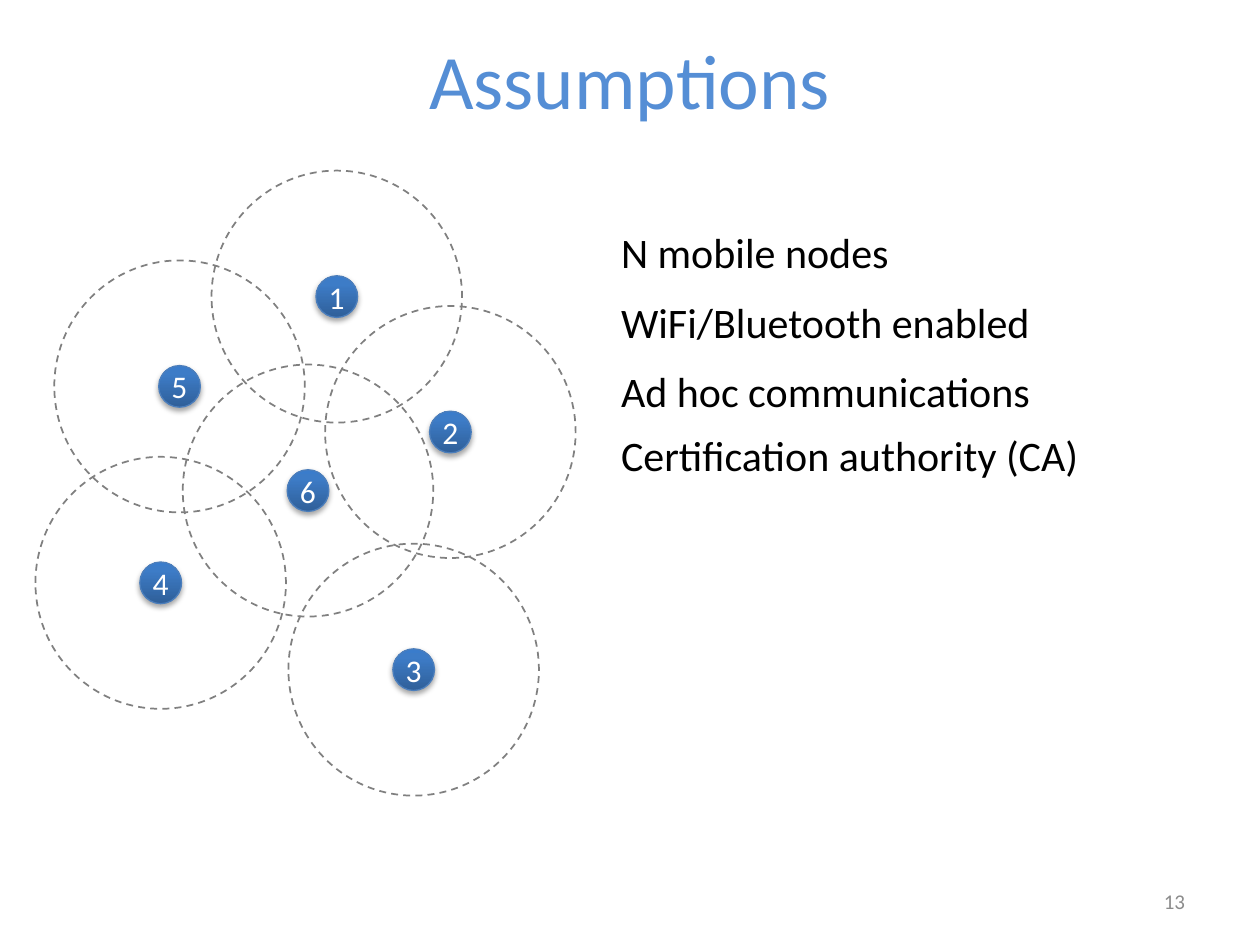
from dataclasses import dataclass

from lxml import etree
from pptx import Presentation
from pptx.dml.color import RGBColor
from pptx.enum.dml import MSO_LINE
from pptx.enum.shapes import MSO_SHAPE
from pptx.enum.text import MSO_ANCHOR, PP_ALIGN
from pptx.oxml.ns import qn
from pptx.util import Cm, Pt

OVAL = MSO_SHAPE.OVAL
DASH = MSO_LINE.DASH
TOP, MIDDLE = MSO_ANCHOR.TOP, MSO_ANCHOR.MIDDLE
LEFT, CENTER, RIGHT = PP_ALIGN.LEFT, PP_ALIGN.CENTER, PP_ALIGN.RIGHT

FONT = "Calibri"
BLACK, WHITE = "000000", "FFFFFF"
DOT = 0.84
RING_W, RING_H = 5.05, 5.08
STOPS = ((0, "2F5F99"), (80, "3D7CC7"), (100, "3A7CCB"))


@dataclass
class Node:
    """A mobile node, placed by its centre in cm."""
    label: str
    x: float
    y: float


@dataclass
class Box:
    """A text box, in cm, with the style its lines share."""
    lines: tuple
    x: float
    y: float
    w: float
    h: float
    size: float
    color: str = BLACK
    align: PP_ALIGN = LEFT
    anchor: MSO_ANCHOR = TOP
    before: float = 0
    after: float = 0


NODES = (
    Node("3", 8.34, 13.5),
    Node("2", 9.08, 8.71),
    Node("1", 6.79, 5.98),
    Node("5", 3.62, 7.79),
    Node("4", 3.24, 11.75),
    Node("6", 6.21, 9.89),
)
BOXES = (
    Box(("Assumptions",), 1.27, 0, 22.86, 3.18, 44, "558ED5", CENTER, MIDDLE),
    Box(("N mobile nodes", "WiFi/Bluetooth enabled", "Ad hoc communications"),
        12.27, 4.45, 11.43, 4.04, 24, before=4.8, after=6),
    Box(("Certification authority (CA)",), 12.27, 8.53, 13.13, 2.51, 24, before=6),
    Box(("13",), 18.21, 17.65, 5.93, 1.02, 12, "8C8C8C", RIGHT, MIDDLE),
)


def paint(code: str) -> RGBColor:
    return RGBColor.from_string(code)


def style(para, size: float, color: str, align: PP_ALIGN) -> None:
    para.alignment = align
    para.font.name = FONT
    para.font.size = Pt(size)
    para.font.color.rgb = paint(color)


def write(slide, box: Box) -> None:
    shape = slide.shapes.add_textbox(Cm(box.x), Cm(box.y), Cm(box.w), Cm(box.h))
    frame = shape.text_frame
    frame.word_wrap = True
    frame.vertical_anchor = box.anchor
    frame.text = "\n".join(box.lines)
    for para in frame.paragraphs:
        style(para, box.size, box.color, box.align)
        para.space_before = Pt(box.before)
        para.space_after = Pt(box.after)


def oval(slide, node: Node, w: float, h: float):
    shape = slide.shapes.add_shape(
        OVAL, Cm(node.x - w / 2), Cm(node.y - h / 2), Cm(w), Cm(h))
    shape.shadow.inherit = False
    return shape


def tint(parent, code: str):
    return etree.SubElement(parent, qn("a:srgbClr"), val=code)


def shade(shape) -> None:
    """Fill with the three-stop gradient, dark at the bottom."""
    shape.fill.gradient()
    shape.fill.gradient_angle = 90
    stops = next(shape.element.iter(qn("a:gsLst")))
    for stop in list(stops):
        stops.remove(stop)
    for pos, code in STOPS:
        tint(etree.SubElement(stops, qn("a:gs"), pos=str(pos * 1000)), code)


def cast(shape) -> None:
    """Add a soft shadow below the shape."""
    effects = next(shape.element.iter(qn("a:effectLst")))
    shadow = etree.SubElement(
        effects, qn("a:outerShdw"), blurRad=str(Pt(3.1)), dist=str(Pt(1.8)),
        dir="5400000", rotWithShape="0")
    etree.SubElement(tint(shadow, BLACK), qn("a:alpha"), val="35000")


def draw(slide, node: Node) -> None:
    dot = oval(slide, node, DOT, DOT)
    shade(dot)
    dot.line.color.rgb = paint("4B7EBC")
    dot.line.width = Pt(0.75)
    cast(dot)
    frame = dot.text_frame
    frame.word_wrap = False
    frame.vertical_anchor = MIDDLE
    frame.text = node.label
    style(frame.paragraphs[0], 18, WHITE, CENTER)

    ring = oval(slide, node, RING_W, RING_H)
    ring.fill.background()
    ring.line.color.rgb = paint("808080")
    ring.line.width = Pt(1)
    ring.line.dash_style = DASH


def main() -> None:
    deck = Presentation()
    deck.slide_width, deck.slide_height = Cm(25.4), Cm(19.05)
    slide = deck.slides.add_slide(deck.slide_layouts[6])
    for node in NODES:
        draw(slide, node)
    for box in BOXES:
        write(slide, box)
    deck.save("out.pptx")


if __name__ == "__main__":
    main()
